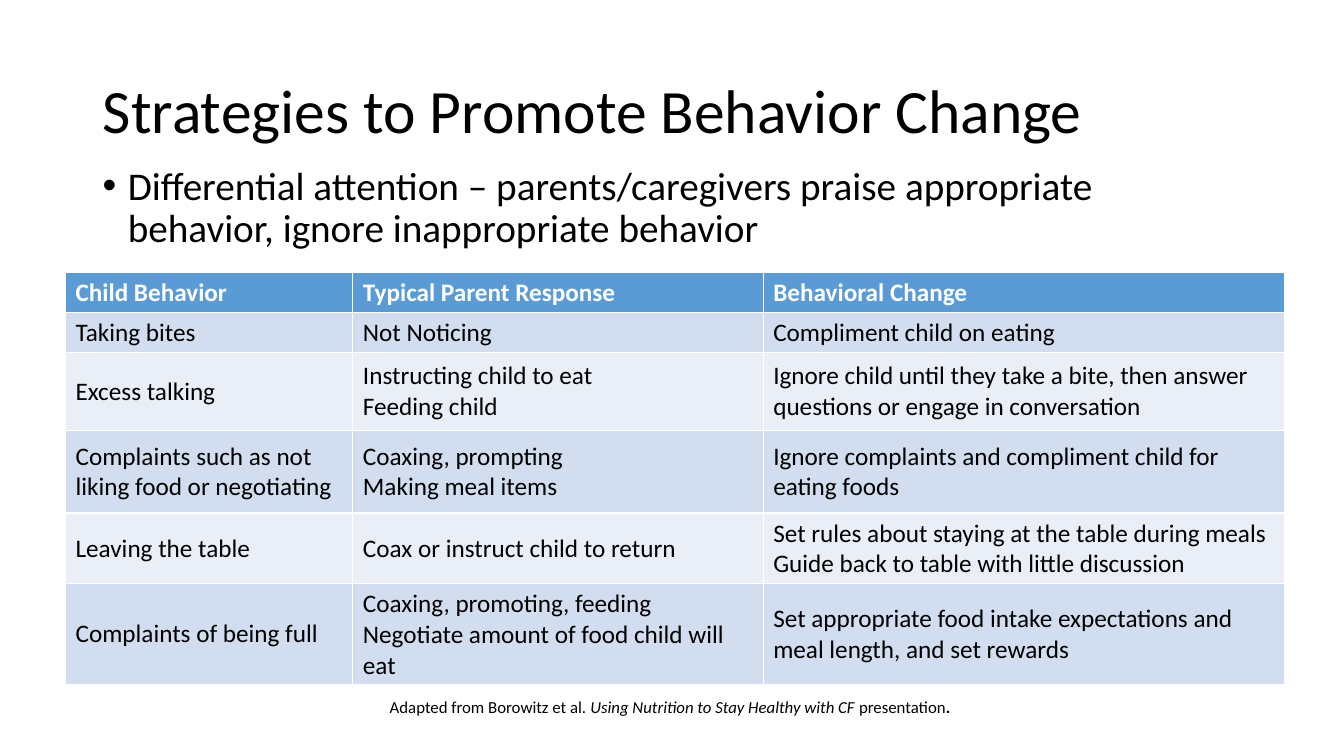
from lxml.etree import SubElement
from pptx import Presentation
from pptx.dml.color import RGBColor
from pptx.enum.text import MSO_ANCHOR, PP_ALIGN
from pptx.oxml.ns import qn
from pptx.util import Inches, Pt

BLACK = RGBColor(0x00, 0x00, 0x00)
WHITE = RGBColor(0xFF, 0xFF, 0xFF)
HEADER_BLUE = RGBColor(0x5B, 0x9B, 0xD5)
BAND_BLUE = RGBColor(0xD2, 0xDE, 0xEF)
BAND_PALE = RGBColor(0xEA, 0xEF, 0xF7)


def add_span(para, text, size, color=BLACK, bold=False, italic=False):
    span = para.add_run()
    span.text = text
    span.font.name = "Calibri"
    span.font.size = Pt(size)
    span.font.color.rgb = color
    span.font.bold = bold
    span.font.italic = italic


deck = Presentation()
deck.slide_width = Inches(13.33)
deck.slide_height = Inches(7.5)
page = deck.slides.add_slide(deck.slide_layouts[5])

title = page.shapes.title
title.left, title.top = Inches(0.92), Inches(0.4)
title.width, title.height = Inches(11.5), Inches(1.45)
title.text_frame.vertical_anchor = MSO_ANCHOR.MIDDLE
para = title.text_frame.paragraphs[0]
para.alignment = PP_ALIGN.LEFT
para.line_spacing = 0.9
add_span(para, "Strategies to Promote Behavior Change", 44)

body = page.shapes.add_textbox(Inches(0.92), Inches(1.6), Inches(11.5), Inches(1.05))
body.text_frame.word_wrap = True
para = body.text_frame.paragraphs[0]
para.line_spacing = 0.9
para.space_before = Pt(10)
add_span(para, "Differential attention – parents/caregivers praise appropriate "
               "behavior, ignore inappropriate behavior", 28)
props = para._p.get_or_add_pPr()
props.set("marL", str(Inches(0.25)))
props.set("indent", str(-Inches(0.25)))
SubElement(props, qn("a:buFont"), typeface="Arial")
SubElement(props, qn("a:buChar"), char="•")

rows = [
    ["Child Behavior", "Typical Parent Response", "Behavioral Change"],
    ["Taking bites", "Not Noticing", "Compliment child on eating"],
    ["Excess talking", "Instructing child to eat\nFeeding child",
     "Ignore child until they take a bite, then answer questions or engage in conversation"],
    ["Complaints such as not liking food or negotiating",
     "Coaxing, prompting\nMaking meal items",
     "Ignore complaints and compliment child for eating foods"],
    ["Leaving the table", "Coax or instruct child to return",
     "Set rules about staying at the table during meals\n"
     "Guide back to table with little discussion"],
    ["Complaints of being full",
     "Coaxing, promoting, feeding\nNegotiate amount of food child will eat",
     "Set appropriate food intake expectations and meal length, and set rewards"],
]
column_widths = [2.85, 4.07, 5.17]
row_heights = [0.4, 0.4, 0.77, 0.82, 0.7, 0.99]

table = page.shapes.add_table(
    len(rows), len(column_widths), Inches(0.65), Inches(2.7),
    Inches(sum(column_widths)), Inches(sum(row_heights))).table
for column, width in zip(table.columns, column_widths):
    column.width = Inches(width)
for r, (texts, height) in enumerate(zip(rows, row_heights)):
    table.rows[r].height = Inches(height)
    is_header = r == 0
    fill = HEADER_BLUE if is_header else BAND_BLUE if r % 2 else BAND_PALE
    for c, text in enumerate(texts):
        cell = table.cell(r, c)
        cell.fill.solid()
        cell.fill.fore_color.rgb = fill
        cell.vertical_anchor = MSO_ANCHOR.TOP if is_header else MSO_ANCHOR.MIDDLE
        for i, line in enumerate(text.split("\n")):
            frame = cell.text_frame
            para = frame.add_paragraph() if i else frame.paragraphs[0]
            add_span(para, line, 18, WHITE if is_header else BLACK, bold=is_header)

credit = page.shapes.add_textbox(Inches(0.6), Inches(6.86), Inches(12.09), Inches(0.3))
credit.text_frame.word_wrap = True
para = credit.text_frame.paragraphs[0]
para.alignment = PP_ALIGN.CENTER
add_span(para, "Adapted from Borowitz et al. ", 12)
add_span(para, "Using Nutrition to Stay Healthy with CF ", 12, italic=True)
add_span(para, "presentation", 12)
add_span(para, ".", 12, bold=True)

deck.save("out.pptx")
